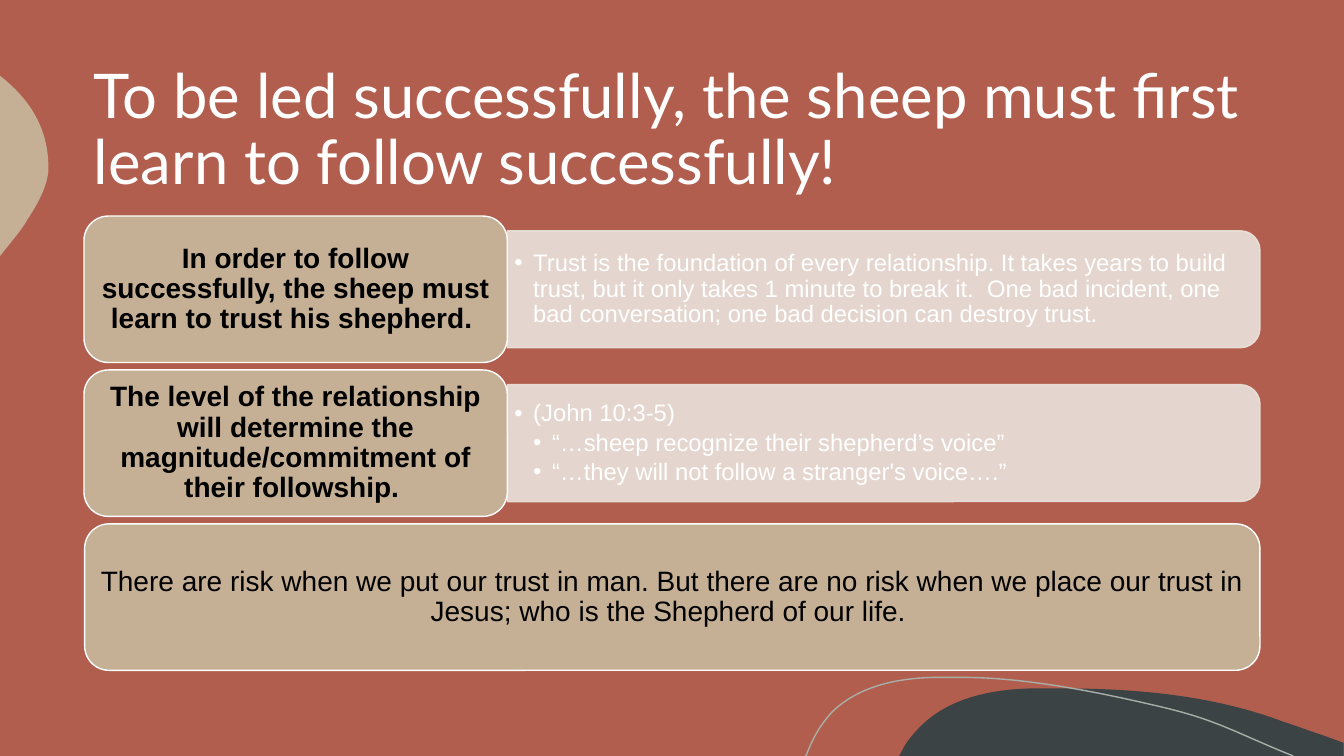
from lxml import etree
from pptx import Presentation
from pptx.dml.color import RGBColor
from pptx.enum.shapes import MSO_SHAPE
from pptx.enum.text import MSO_ANCHOR, PP_ALIGN
from pptx.oxml.ns import qn
from pptx.util import Emu, Pt

ROUND = MSO_SHAPE.ROUNDED_RECTANGLE
HALF = MSO_SHAPE.ROUND_2_SAME_RECTANGLE
MIDDLE = MSO_ANCHOR.MIDDLE
LEFT, CENTER = PP_ALIGN.LEFT, PP_ALIGN.CENTER

SCALE = 3048
CELL = 3
INDENT = 56
TOP, PITCH, TALL = 643, 458, 436
RUST, SAND, SLATE = "B15E4E", "C5B096", "3B4345"
CREAM, MIST, WHITE, BLACK = "EAE4DD", "A9AEA7", "FFFFFF", "000000"

TITLE = "To be led successfully, the sheep must first learn to follow successfully!"
ROWS = [
    ("In order to follow successfully, the sheep must learn to trust his shepherd. ",
     [(1, "Trust is the foundation of every relationship. It takes years to build "
          "trust, but it only takes 1 minute to break it.  One bad incident, one "
          "bad conversation; one bad decision can destroy trust.")]),
    ("The level of the relationship will determine the magnitude/commitment "
     "of their followship. ",
     [(1, "(John 10:3-5)"),
      (2, "“…sheep recognize their shepherd’s voice”"),
      (2, "“…they will not follow a stranger's voice….”")]),
]
CLOSING = ("There are risk when we put our trust in man. But there are no risk when "
           "we place our trust in Jesus; who is the Shepherd of our life. ")

HILL = [(1054, 683), (1128, 683, 1204, 690, 1273, 716),
        (1286, 720, 1298, 725, 1311, 729), (1333, 737), (1333, 750),
        (892, 750), (898, 739), (902, 733, 906, 728, 911, 723),
        (939, 693, 982, 684, 1023, 683), (1033, 683, 1043, 683, 1054, 683)]
PEBBLE = [(0, 75), (1, 76), (34, 102, 49, 133, 48, 170),
          (46, 187, 37, 203, 27, 218), (24, 224, 17, 233, 8, 244), (0, 254)]
WAVE = [(799, 750), (800, 749), (806, 733, 814, 719, 824, 708),
        (850, 681, 889, 673, 926, 672), (955, 672),
        (1022, 672, 1100, 689, 1155, 702), (1209, 715, 1226, 727, 1283, 750)]


def px(num):
    """Turn px into EMU."""
    return Emu(num * SCALE)


def color(code):
    """Turn a hex string into a colour."""
    return RGBColor.from_string(code)


def paint(shape, fill=None, line=None):
    """Set fill and line, and drop the shadow."""
    shape.shadow.inherit = False
    if fill:
        shape.fill.solid()
        shape.fill.fore_color.rgb = color(fill)
    else:
        shape.fill.background()
    if line:
        shape.line.color.rgb = color(line)
        shape.line.width = Pt(1)
    else:
        shape.line.fill.background()


def fade(shape, share):
    """Make the fill and line of a shape partly clear."""
    for tint in shape.fill._xPr.iter(qn("a:srgbClr")):
        etree.SubElement(tint, qn("a:alpha"), val=str(share * 1000))


def blob(slide, parts, fill=None, line=None):
    """Draw an outline; parts of six numbers become cubic curves."""
    spots = [(px(part[i] * CELL), px(part[i + 1] * CELL))
             for part in parts for i in range(0, len(part), 2)]
    pen = slide.shapes.build_freeform(*spots[0])
    pen.add_line_segments(spots[1:], close=bool(fill))
    shape = pen.convert_to_shape()
    lines = iter(list(shape._element.iter(qn("a:lnTo"))))
    for part in parts[1:]:
        first = next(lines)
        if len(part) == 6:
            curve = etree.Element(qn("a:cubicBezTo"))
            first.addprevious(curve)
            for leg in (first, next(lines), next(lines)):
                curve.append(leg[0])
                leg.getparent().remove(leg)
    paint(shape, fill, line)


def bullet(para, level):
    """Give a paragraph a hanging bullet."""
    props = para._p.get_or_add_pPr()
    props.set("marL", str(px(INDENT * level)))
    props.set("indent", str(px(-INDENT)))
    etree.SubElement(props, qn("a:buFont"), typeface="Arial")
    etree.SubElement(props, qn("a:buChar"), char="•")


def write(shape, items, size=20, ink=BLACK, font="Arial", bold=False,
          align=CENTER, inset=(25, 12), after=0):
    """Fill a shape with (level, text) paragraphs; level 0 has no bullet."""
    frame = shape.text_frame
    frame.word_wrap = True
    frame.vertical_anchor = MIDDLE
    frame.margin_left = frame.margin_right = px(inset[0])
    frame.margin_top = frame.margin_bottom = px(inset[1])
    for spot, (level, text) in enumerate(items):
        para = frame.add_paragraph() if spot else frame.paragraphs[0]
        para.alignment = align
        para.line_spacing = 0.9
        para.space_after = Pt(after)
        if level:
            bullet(para, level)
        run = para.add_run()
        run.text = text
        run.font.size = Pt(size)
        run.font.name = font
        run.font.bold = bold
        run.font.color.rgb = color(ink)


def label(slide, box, items, **style):
    """Add a text box."""
    write(slide.shapes.add_textbox(*map(px, box)), items, **style)


def card(slide, box, text, bold=False):
    """Add a rounded sand card with centred text."""
    shape = slide.shapes.add_shape(ROUND, *map(px, box))
    paint(shape, SAND, WHITE)
    write(shape, [(0, text)], bold=bold)


def panel(slide, top, items):
    """Add a pale panel, rounded on the right, with a bullet list."""
    shape = slide.shapes.add_shape(HALF, *map(px, (2456, top - 902, 348, 2240)))
    shape.rotation = 90
    paint(shape, CREAM, CREAM)
    fade(shape, 90)
    label(slide, (1510, top + 61, 2223, 315), items, size=17, ink=WHITE,
          align=LEFT, inset=(21, 12), after=2.5)


def main():
    """Build the slide and save it."""
    deck = Presentation()
    deck.slide_width, deck.slide_height = px(4000), px(2250)
    slide = deck.slides.add_slide(deck.slide_layouts[6])
    slide.background.fill.solid()
    slide.background.fill.fore_color.rgb = color(RUST)
    blob(slide, HILL, fill=SLATE)
    blob(slide, PEBBLE, fill=SAND)
    blob(slide, WAVE, line=MIST)
    label(slide, (250, 141, 3500, 500), [(0, TITLE)], size=44, ink=WHITE,
          font="Lato", align=LEFT, inset=(30, 15))
    for row, (head, items) in enumerate(ROWS):
        top = TOP + row * PITCH
        panel(slide, top, items)
        card(slide, (250, top, 1260, TALL), head, bold=True)
    card(slide, (252, TOP + len(ROWS) * PITCH, 3498, TALL), CLOSING)
    deck.save("out.pptx")


if __name__ == "__main__":
    main()
